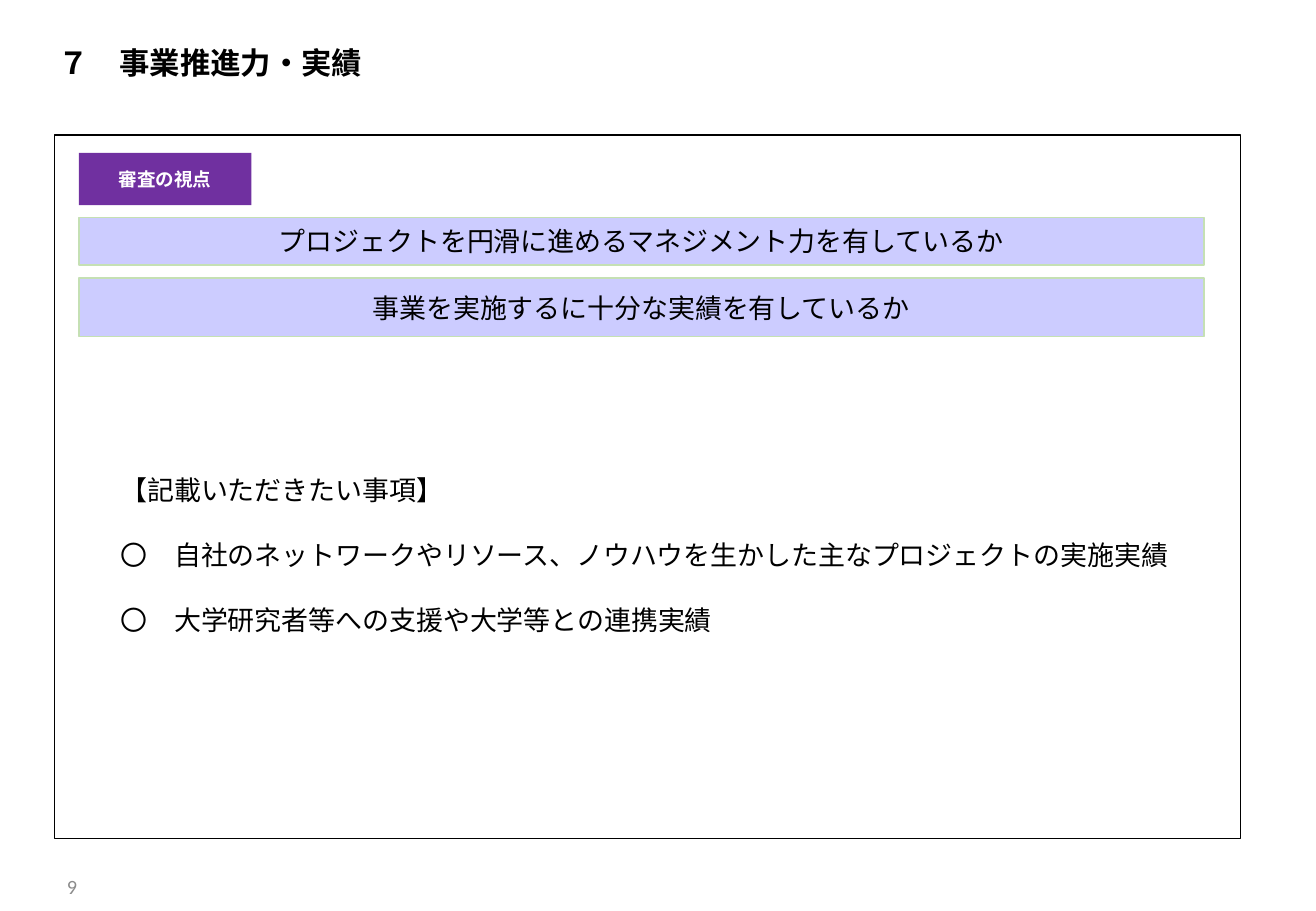
"""Build the slide on project management strength and track record."""
import pptx
import pptx.util
import pptx.dml.color
import pptx.enum.shapes
import pptx.enum.text

Pt = pptx.util.Pt
ANCHOR = pptx.enum.text.MSO_ANCHOR
ALIGN = pptx.enum.text.PP_ALIGN
COLORS = {
    "black": "000000",
    "white": "FFFFFF",
    "purple": "7030A0",
    "lavender": "CCCCFF",
    "green": "C5E0B4",
    "gray": "8C8C8C",
}


def write_text(shape, lines, font, size, color, bold=False, align=ALIGN.CENTER,
               anchor=ANCHOR.MIDDLE, insets=(3, 3, 3, 3), spacing=None):
    frame = shape.text_frame
    frame.word_wrap = True
    frame.auto_size = pptx.enum.text.MSO_AUTO_SIZE.NONE
    frame.vertical_anchor = anchor
    frame.margin_left, frame.margin_top, frame.margin_right, frame.margin_bottom = map(Pt, insets)
    frame.text = "\n".join(lines)
    for paragraph in frame.paragraphs:
        paragraph.alignment = align
        paragraph.line_spacing = spacing
        paragraph.font.name = font
        paragraph.font.size = Pt(size)
        paragraph.font.bold = bold
        paragraph.font.color.rgb = pptx.dml.color.RGBColor.from_string(COLORS[color])


def add_box(box, fill, line=None):
    shape = slide.shapes.add_shape(pptx.enum.shapes.MSO_SHAPE.RECTANGLE, *map(Pt, box))
    shape.shadow.inherit = False
    shape.fill.solid()
    shape.fill.fore_color.rgb = pptx.dml.color.RGBColor.from_string(COLORS[fill])
    if line:
        shape.line.color.rgb = pptx.dml.color.RGBColor.from_string(COLORS[line])
        shape.line.width = Pt(1)
    else:
        shape.line.fill.background()
    return shape


presentation = pptx.Presentation()
presentation.slide_width = Pt(780)
presentation.slide_height = Pt(540)
slide = presentation.slides.add_slide(presentation.slide_layouts[5])

title = slide.shapes.title
title.left, title.top, title.width, title.height = map(Pt, (31.7, 23, 291.6, 27.4))
write_text(title, ["７　事業推進力・実績"], "Calibri", 18, "black", bold=True, align=ALIGN.LEFT)

content_frame = add_box((32.4, 80, 703, 417), "white", "black")
requested_items = [
    "【記載いただきたい事項】",
    "〇　自社のネットワークやリソース、ノウハウを生かした主なプロジェクトの実施実績",
    "〇　大学研究者等への支援や大学等との連携実績",
]
write_text(content_frame, requested_items, "Arial", 16, "black", align=ALIGN.LEFT,
           anchor=ANCHOR.TOP, insets=(39, 181.5, 3, 3), spacing=Pt(38.5))

viewpoint_label = add_box((46.8, 90.7, 102.2, 31), "purple")
write_text(viewpoint_label, ["審査の視点"], "Arial", 11, "white", bold=True)

viewpoints = [
    (128.9, 28.1, "Arial", "プロジェクトを円滑に進めるマネジメント力を有しているか"),
    (164.9, 34.6, "Calibri", "事業を実施するに十分な実績を有しているか"),
]
for top, height, font, text in viewpoints:
    bar = add_box((46.8, top, 666.7, height), "lavender", "green")
    write_text(bar, [text], font, 16, "black")

page_number = slide.shapes.add_textbox(Pt(33.1), Pt(518.4), Pt(14.4), Pt(13.7))
write_text(page_number, ["9"], "Calibri", 12, "gray", insets=(4.8, 0, 0, 0))

presentation.save("out.pptx")
